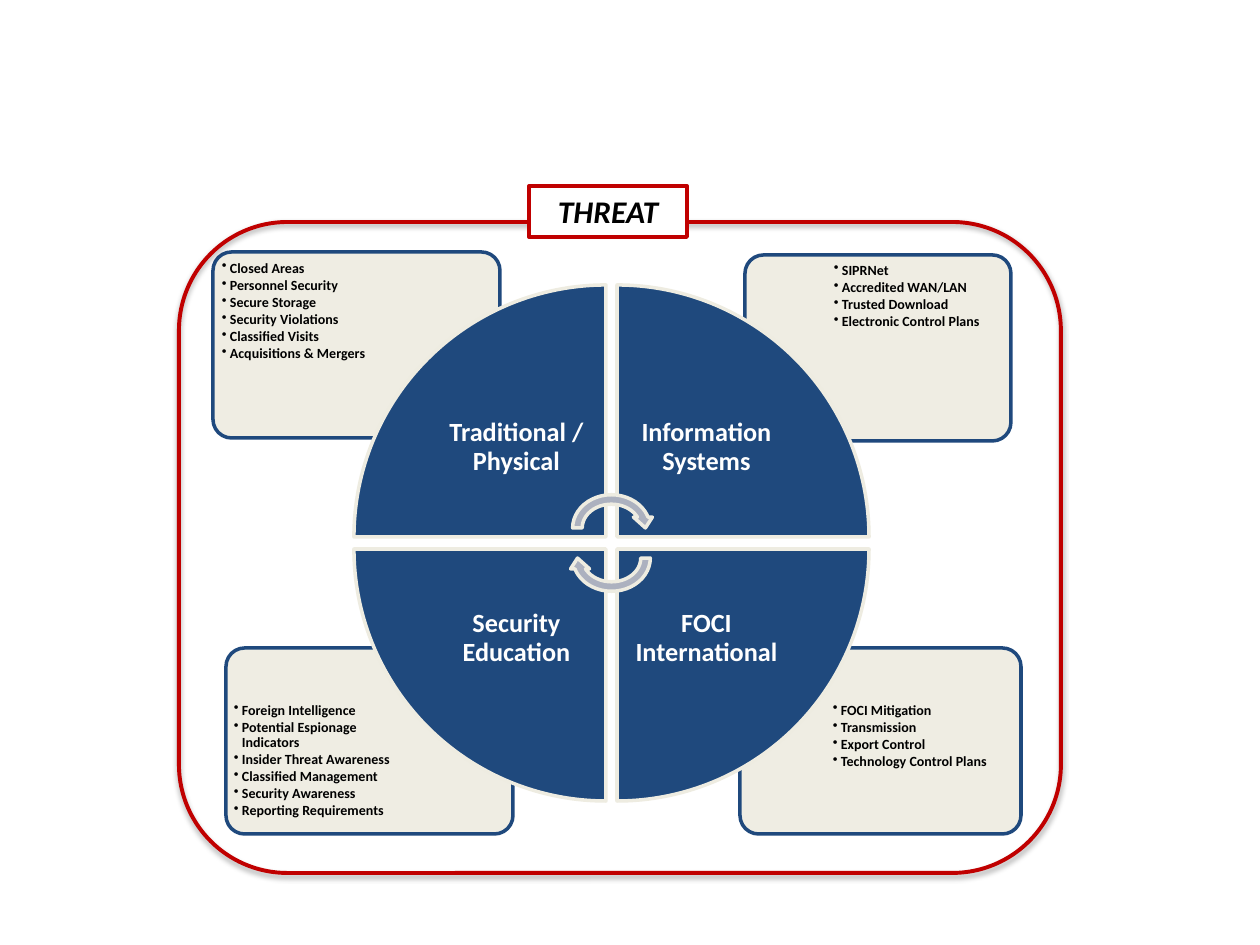
from dataclasses import dataclass

from lxml.etree import SubElement
from pptx import Presentation
from pptx.dml.color import RGBColor as RGB
from pptx.enum.shapes import MSO_SHAPE as SHAPE
from pptx.enum.text import MSO_ANCHOR as ANCHOR, PP_ALIGN as ALIGN
from pptx.oxml.ns import qn
from pptx.util import Emu, Pt


@dataclass(frozen=True)
class Theme:
    navy: RGB = RGB(0x1F, 0x49, 0x7D)
    cream: RGB = RGB(0xEE, 0xEC, 0xE1)
    red: RGB = RGB(0xC0, 0x00, 0x00)
    grey: RGB = RGB(0xAC, 0xB1, 0xBF)
    white: RGB = RGB(0xFF, 0xFF, 0xFF)
    black: RGB = RGB(0x00, 0x00, 0x00)
    font: str = "Calibri"
    bullet_size: int = 8
    label_size: int = 15
    threat_size: int = 18


theme = Theme()
PX = 914400 / 126

prs = Presentation()
prs.slide_width, prs.slide_height = Emu(9144000), Emu(6858000)
slide = prs.slides.add_slide(prs.slide_layouts[6])


def add_outline(kind, box, fill, line, weight=2, rotation=0):
    shape = slide.shapes.add_shape(kind, *[Emu(round(v * PX)) for v in box])
    shape.shadow.inherit = False
    if fill is None:
        shape.fill.background()
    else:
        shape.fill.solid()
        shape.fill.fore_color.rgb = fill
    shape.line.color.rgb = line
    shape.line.width = Pt(weight)
    shape.rotation = rotation
    return shape


def write(shape, lines, size, color, align=ALIGN.CENTER, anchor=ANCHOR.TOP,
          inset=None, spacing=None):
    frame = shape.text_frame
    frame.word_wrap = True
    frame.vertical_anchor = anchor
    if inset is not None:
        frame.margin_left = frame.margin_right = Emu(round(inset * PX))
        frame.margin_top = frame.margin_bottom = Emu(round(inset * PX))
    frame.text = "\n".join(lines)
    for paragraph in frame.paragraphs:
        paragraph.alignment = align
        paragraph.line_spacing = spacing
        for run in paragraph.runs:
            run.font.name = theme.font
            run.font.size = Pt(size)
            run.font.bold = True
            run.font.color.rgb = color
    return frame


topics = [
    ((740, 648, 281, 186), (828, 698, 189, 131),
     ["FOCI Mitigation", "Transmission", "Export Control", "Technology Control Plans"]),
    ((226, 648, 287, 186), (229, 698, 193, 131),
     ["Foreign Intelligence", "Potential Espionage Indicators", "Insider Threat Awareness",
      "Classified Management", "Security Awareness", "Reporting Requirements"]),
    ((745, 255, 266, 186), (829, 258, 178, 131),
     ["SIPRNet", "Accredited WAN/LAN", "Trusted Download", "Electronic Control Plans"]),
    ((213, 252, 287, 186), (217, 256, 193, 131),
     ["Closed Areas", "Personnel Security", "Secure Storage", "Security Violations",
      "Classified Visits", "Acquisitions & Mergers"]),
]
for card_box, list_box, items in topics:
    card = add_outline(SHAPE.ROUNDED_RECTANGLE, card_box, theme.cream, theme.navy)
    card.adjustments[0] = 0.1
    card_color = card.fill._xPr.find(qn("a:solidFill"))[0]
    SubElement(card_color, qn("a:alpha"), val="90000")
    item_list = slide.shapes.add_textbox(*[Emu(round(v * PX)) for v in list_box])
    frame = write(item_list, items, theme.bullet_size, theme.black, ALIGN.LEFT,
                  inset=5, spacing=0.9)
    for paragraph in frame.paragraphs:
        paragraph.level = 1
        paragraph.space_after = Pt(1.2)
        props = paragraph._p.get_or_add_pPr()
        props.set("marL", "57150")
        props.set("indent", "-57150")
        SubElement(props, qn("a:buChar"), char="•")

WEDGE, LABEL = 252, 179
LEFT, RIGHT, TOP, BOTTOM = 354, 617, 285, 549
quadrants = [
    ("Traditional / Physical", LEFT, TOP),
    ("Information Systems", RIGHT, TOP),
    ("FOCI International", RIGHT, BOTTOM),
    ("Security Education", LEFT, BOTTOM),
]
for turn, (name, x, y) in enumerate(quadrants):
    add_outline(SHAPE.PIE_WEDGE, (x, y, WEDGE, WEDGE), theme.navy, theme.cream,
                rotation=90 * turn)
    label_x = x + WEDGE - LABEL if x == LEFT else x
    label_y = y + WEDGE - LABEL if y == TOP else y
    label = slide.shapes.add_textbox(
        *[Emu(round(v * PX)) for v in (label_x, label_y, LABEL, LABEL)])
    write(label, [name], theme.label_size, theme.white, anchor=ANCHOR.MIDDLE,
          inset=15, spacing=0.9)

for y, rotation in ((490, 0), (520, 180)):
    add_outline(SHAPE.CIRCULAR_ARROW, (568, y, 87, 76), theme.grey, theme.cream,
                rotation=rotation)

border = add_outline(SHAPE.ROUNDED_RECTANGLE, (179, 222, 882, 651), None, theme.red, 2.25)
effects = border._element.spPr.find(qn("a:effectLst"))
shadow = SubElement(effects, qn("a:outerShdw"), blurRad="40000", dist="23000",
                    dir="5400000", rotWithShape="0")
shadow_color = SubElement(shadow, qn("a:srgbClr"), val=str(theme.black))
SubElement(shadow_color, qn("a:alpha"), val="35000")

threat = add_outline(SHAPE.RECTANGLE, (529, 186, 158, 51), theme.white, theme.red, 2.25)
frame = write(threat, ["THREAT"], theme.threat_size, theme.black)
frame.paragraphs[0].runs[0].font.italic = True

prs.save("out.pptx")
